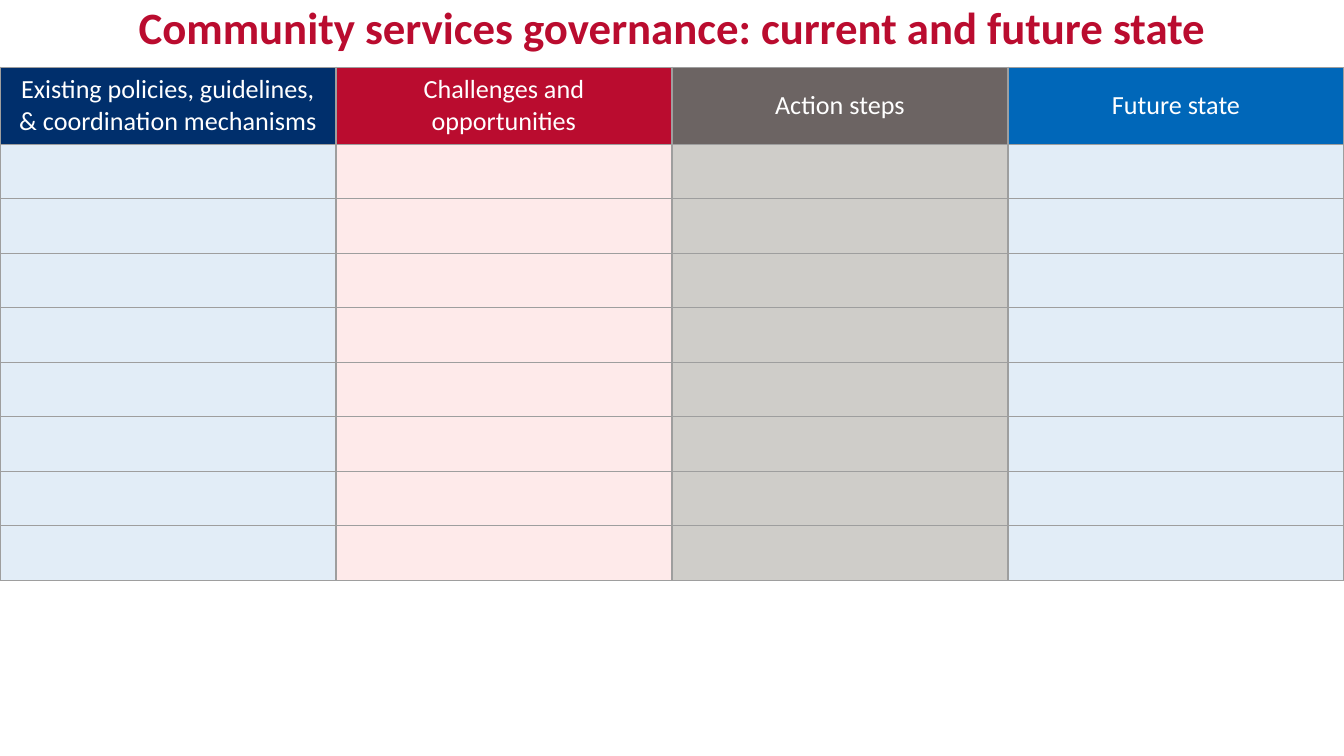
from dataclasses import dataclass

from lxml import etree
from pptx import Presentation
from pptx.dml.color import RGBColor
from pptx.enum import text
from pptx.oxml import ns
from pptx.util import Cm, Pt


@dataclass(frozen=True)
class Theme:
    font: str = "Calibri"
    title_size: float = 24
    header_size: float = 14
    title_color: str = "BA0C2F"
    header_color: str = "FFFFFF"
    border_color: str = "9E9E9E"
    border_width: float = 0.75


THEME = Theme()
TITLE = "Community services governance: current and future state"
STAGES = [
    ("Existing policies, guidelines, & coordination mechanisms", "002F6C", "E2EDF7"),
    ("Challenges and opportunities", "BA0C2F", "FEEAEA"),
    ("Action steps", "6C6463", "CFCDC9"),
    ("Future state", "0067B9", "E2EDF7"),
]
BLANK_ROWS = 8
SLIDE_WIDTH, SLIDE_HEIGHT = 25.4, 14.29
TITLE_HEIGHT = 1.27
HEADER_HEIGHT, ROW_HEIGHT = 1.45, 1.02


def apply_format(target, values):
    for key, value in values.items():
        setattr(target, key, value)


def write_centered(frame, wording, size, color, bold=False):
    frame.text = wording
    paragraph = frame.paragraphs[0]
    paragraph.alignment = text.PP_ALIGN.CENTER
    apply_format(paragraph.font, {"name": THEME.font, "size": Pt(size), "bold": bold})
    paragraph.font.color.rgb = RGBColor.from_string(color)


def draw_borders(cell):
    properties = cell._tc.get_or_add_tcPr()
    for side in ("lnL", "lnR", "lnT", "lnB"):
        border = etree.SubElement(
            properties, ns.qn(f"a:{side}"), w=str(Pt(THEME.border_width))
        )
        fill = etree.SubElement(border, ns.qn("a:solidFill"))
        etree.SubElement(fill, ns.qn("a:srgbClr"), val=THEME.border_color)


def fill_cell(cell, color):
    draw_borders(cell)
    cell.fill.solid()
    cell.fill.fore_color.rgb = RGBColor.from_string(color)


def place_title(slide, left, top, width, height):
    heading = slide.shapes.title
    apply_format(heading, {"left": left, "top": top, "width": width, "height": height})
    frame = heading.text_frame
    inset = Cm(0.25)
    apply_format(frame, {
        "margin_left": inset,
        "margin_right": inset,
        "margin_top": inset,
        "margin_bottom": inset,
        "vertical_anchor": text.MSO_ANCHOR.BOTTOM,
        "word_wrap": True,
        "auto_size": text.MSO_AUTO_SIZE.NONE,
    })
    write_centered(frame, TITLE, THEME.title_size, THEME.title_color, bold=True)


def place_governance_table(slide, left, top, width, height):
    governance = slide.shapes.add_table(
        BLANK_ROWS + 1, len(STAGES), left, top, width, height
    ).table
    apply_format(governance, {"first_row": False, "horz_banding": False})
    for row in governance.rows:
        row.height = Cm(ROW_HEIGHT)
    governance.rows[0].height = Cm(HEADER_HEIGHT)
    for column, (stage, header_fill, body_fill) in enumerate(STAGES):
        governance.columns[column].width = width // len(STAGES)
        header = governance.cell(0, column)
        fill_cell(header, header_fill)
        header.vertical_anchor = text.MSO_ANCHOR.MIDDLE
        write_centered(
            header.text_frame, stage, THEME.header_size, THEME.header_color
        )
        for row in range(1, BLANK_ROWS + 1):
            fill_cell(governance.cell(row, column), body_fill)


def main():
    deck = Presentation()
    apply_format(deck, {
        "slide_width": Cm(SLIDE_WIDTH),
        "slide_height": Cm(SLIDE_HEIGHT),
    })
    slide = deck.slides.add_slide(deck.slide_layouts.get_by_name("Title Only"))
    place_title(slide, Cm(0), Cm(0), Cm(SLIDE_WIDTH), Cm(TITLE_HEIGHT))
    place_governance_table(
        slide, Cm(0), Cm(TITLE_HEIGHT), Cm(SLIDE_WIDTH),
        Cm(HEADER_HEIGHT + BLANK_ROWS * ROW_HEIGHT),
    )
    deck.save("out.pptx")


if __name__ == "__main__":
    main()
